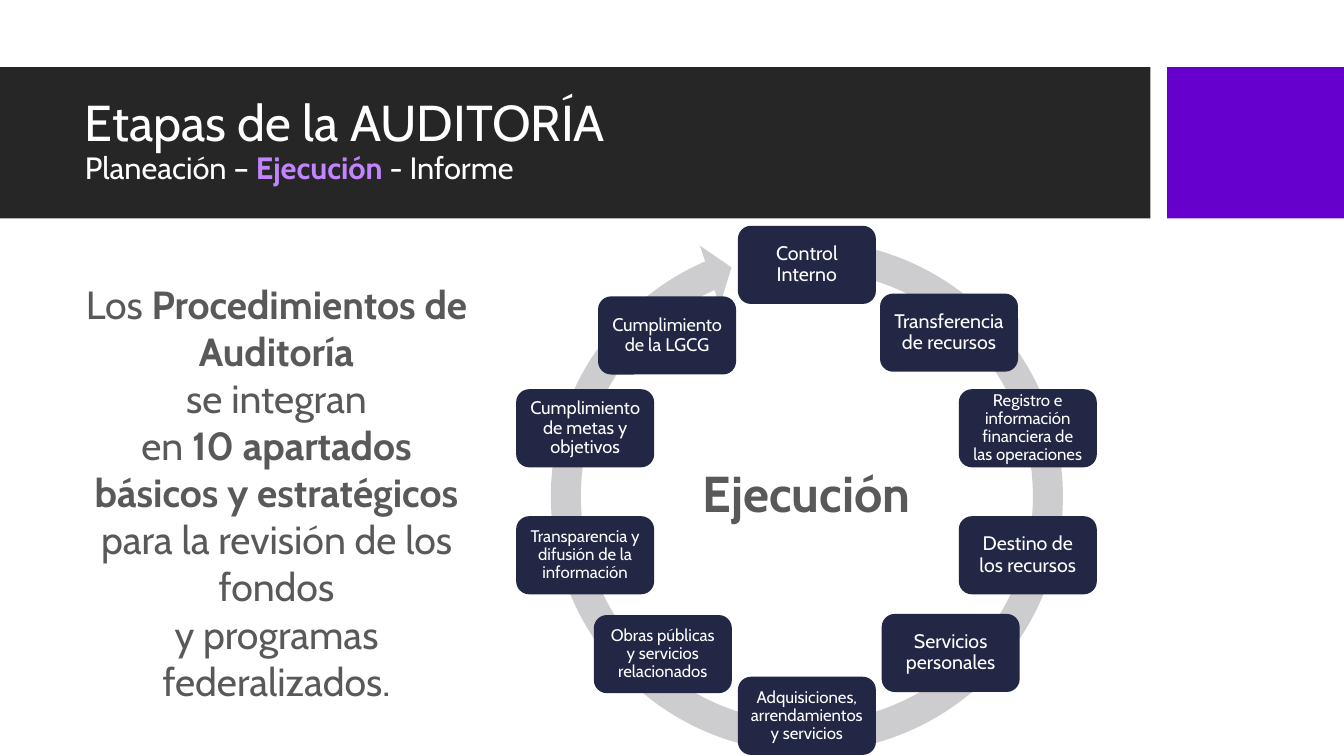
from pptx import Presentation
from pptx.dml.color import RGBColor
from pptx.enum.shapes import MSO_SHAPE as Shape
from pptx.enum.text import MSO_ANCHOR as Anchor, MSO_AUTO_SIZE as AutoSize, PP_ALIGN as Align
from pptx.util import Pt

WHITE = RGBColor(0xFF, 0xFF, 0xFF)
CHARCOAL = RGBColor(0x26, 0x26, 0x26)
PURPLE = RGBColor(0x66, 0x00, 0xCC)
LILAC = RGBColor(0xC2, 0x85, 0xFF)
GRAY = RGBColor(0x59, 0x59, 0x59)
NAVY = RGBColor(0x21, 0x27, 0x45)
SILVER = RGBColor(0xCD, 0xCD, 0xCF)
FONT = "Cabin"

# Content: each span is (text, format)
BOLD = {"bold": True}
TITLE = [[
    ("Etapas de la AUDITORÍA", {"size": 36}),
    ("\n", {}),
    ("Planeación – ", {}),
    ("Ejecución", {"bold": True, "color": LILAC}),
    (" - Informe", {}),
]]
MESSAGE = [
    [("Los ", {}), ("Procedimientos de Auditoría", BOLD)],
    [("se integran", {})],
    [("en ", {}), ("10 apartados básicos y estratégicos", BOLD)],
    [("para la revisión de los fondos", {})],
    [("y programas federalizados.", {})],
]
CENTER_LABEL = "Ejecución"

# Steps clockwise from the top: text, size, left, top
FAR_LEFT, MIDDLE, FAR_RIGHT = 368.7, 527.1, 684.9
UPPER, LOWER = 278, 368.7
STEPS = [
    ("Control Interno", 14, MIDDLE, 161.3),
    ("Transferencia de recursos", 14, 628.6, 209.7),
    ("Registro e información financiera de las operaciones", 12, FAR_RIGHT, UPPER),
    ("Destino de los recursos", 14, FAR_RIGHT, LOWER),
    ("Servicios personales", 14, 629.8, 438.5),
    ("Adquisiciones, arrendamientos y servicios", 12, MIDDLE, 483.4),
    ("Obras públicas y servicios relacionados", 12, 424.2, 439.3),
    ("Transparencia y difusión de la información", 12, FAR_LEFT, LOWER),
    ("Cumplimiento de metas y objetivos", 13, FAR_LEFT, UPPER),
    ("Cumplimiento de la LGCG", 13, 427.2, 211.7),
]
STEP_SIZE = (98.6, 55.8)
HEADER_TOP, HEADER_HEIGHT = 48, 108


def write(box, text, size=14, color=WHITE, bold=False, align=Align.CENTER,
          spacing=None, inset=None):
    """Fill a box with a string or with paragraphs of (text, format) spans."""
    frame = box.text_frame
    frame.word_wrap = True
    frame.auto_size = AutoSize.NONE
    frame.vertical_anchor = Anchor.MIDDLE
    if inset is not None:
        frame.margin_left = frame.margin_right = Pt(inset)
        frame.margin_top = frame.margin_bottom = Pt(inset)
    paragraphs = [[(text, {})]] if isinstance(text, str) else text
    for index, spans in enumerate(paragraphs):
        para = frame.add_paragraph() if index else frame.paragraphs[0]
        para.alignment = align
        para.space_before = para.space_after = Pt(0)
        if spacing:
            para.line_spacing = spacing
        for words, style in spans:
            if words == "\n":
                para.add_line_break()
                continue
            span = para.add_run()
            span.text = words
            span.font.name = FONT
            span.font.size = Pt(style.get("size", size))
            span.font.bold = style.get("bold", bold)
            span.font.color.rgb = style.get("color", color)


def add_block(page, kind, left, top, width, height, fill):
    block = page.shapes.add_shape(kind, Pt(left), Pt(top), Pt(width), Pt(height))
    block.shadow.inherit = False
    block.fill.solid()
    block.fill.fore_color.rgb = fill
    block.line.fill.background()
    return block


def add_text(page, left, top, width, height, text, **style):
    box = page.shapes.add_textbox(Pt(left), Pt(top), Pt(width), Pt(height))
    write(box, text, **style)


def main():
    deck = Presentation()
    deck.slide_width, deck.slide_height = Pt(960), Pt(540)
    page = deck.slides.add_slide(deck.slide_layouts[5])

    # Header bars, with the title in front of them
    for left, width, fill in [(0, 821.8, CHARCOAL), (833.6, 126.4, PURPLE)]:
        add_block(page, Shape.RECTANGLE, left, HEADER_TOP, width, HEADER_HEIGHT, fill)
    title = page.shapes.title
    title.left, title.top, title.width, title.height = Pt(53.5), Pt(59), Pt(757), Pt(85)
    write(title, TITLE, size=22, align=Align.LEFT, spacing=0.9)
    title.element.getparent().append(title.element)

    # Message on the left
    add_text(page, 53.5, 183, 288, 337, MESSAGE, size=28, color=GRAY)

    # Cycle arrow
    arrow = add_block(page, Shape.CIRCULAR_ARROW, 381.6, 159.8, 389.5, 389.5, SILVER)
    for index, value in enumerate([0.055, 3.307, 147.756, 168.029, 0.058]):
        arrow.adjustments[index] = value

    # Steps around the cycle
    for text, size, left, top in STEPS:
        step = add_block(page, Shape.ROUNDED_RECTANGLE, left, top, *STEP_SIZE, NAVY)
        write(step, text, size=size, spacing=0.9, inset=6.5)

    # Label in the middle of the cycle
    add_text(page, 483, 317, 186, 69, CENTER_LABEL, size=36, color=GRAY, bold=True)

    deck.save("out.pptx")


if __name__ == "__main__":
    main()
